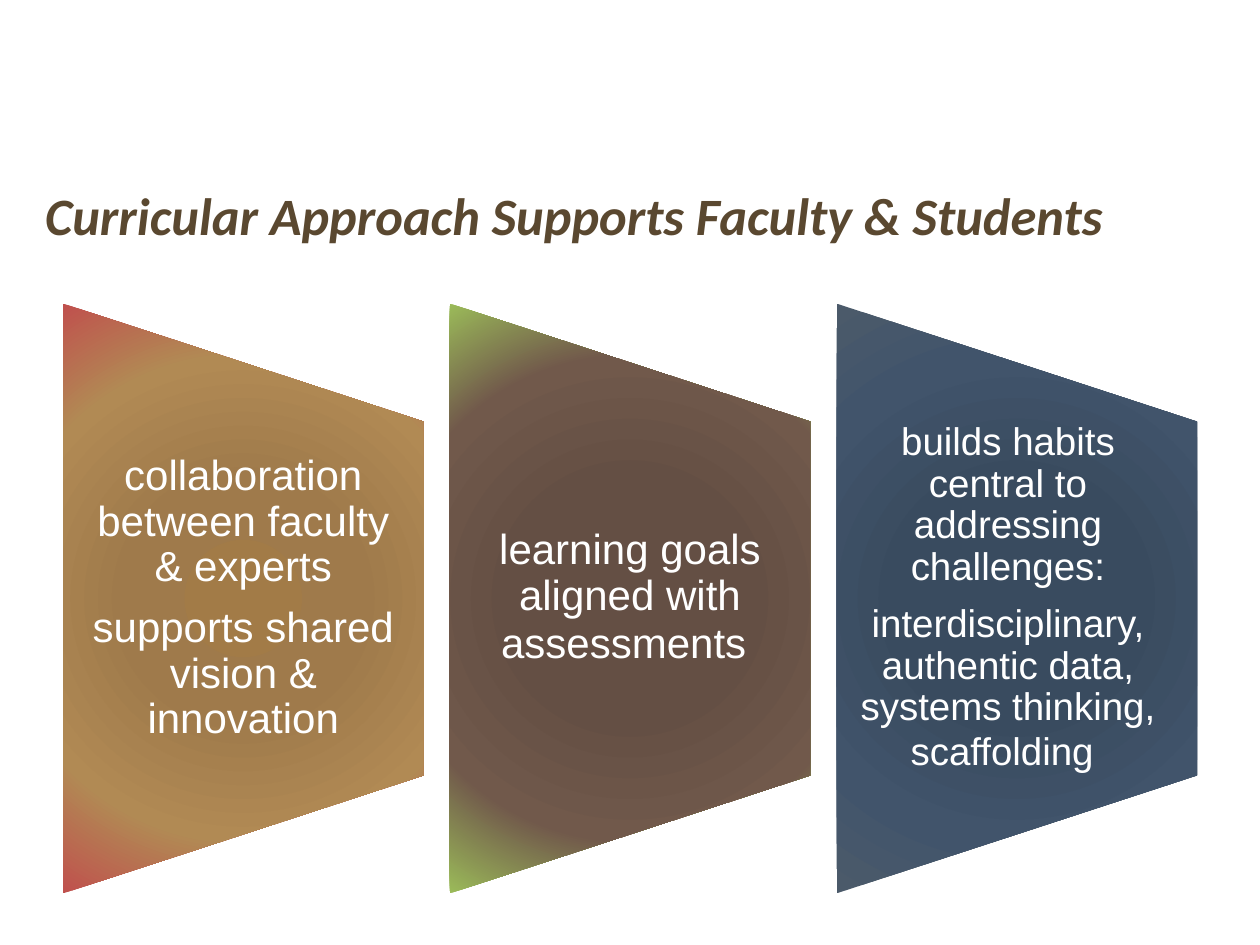
from lxml import etree
from pptx import Presentation
from pptx.dml.color import RGBColor
from pptx.enum.shapes import MSO_SHAPE
from pptx.enum.text import MSO_ANCHOR, PP_ALIGN
from pptx.oxml.ns import qn
from pptx.util import Pt

PANEL = MSO_SHAPE.FLOWCHART_MANUAL_OPERATION
MIDDLE = MSO_ANCHOR.MIDDLE
CENTER = PP_ALIGN.CENTER

TITLE = "Curricular Approach Supports Faculty & Students"
PANELS = [
    {"lines": ["collaboration between faculty & experts",
               "supports shared vision & innovation"],
     "size": 24, "tail": None, "shift": 0,
     "shades": ["A27B47", "9F7A4B", "B18A54", "C0504D"]},
    {"lines": ["learning goals aligned with assessments"],
     "size": 24, "tail": 26, "shift": 0,
     "shades": ["654F43", "644F44", "71594B", "9BBB59"]},
    {"lines": ["builds habits central to addressing challenges:",
               "interdisciplinary, authentic data, systems thinking, scaffolding"],
     "size": 22, "tail": 24, "shift": -5,
     "shades": ["384B60", "394B5F", "41546B", "4B5A6A"]},
]
THEME = {"title": "5A4830", "label": "FFFFFF", "head": "Calibri",
         "body": "Arial", "head_size": 30, "stops": [0, 34, 70, 100]}

WIDE, HIGH = 720, 540
LONG, SHORT, TALL = 337, 206, 202.3
PITCH, MID = 221, 342


def style(run, face, size, color):
    run.font.name = face
    run.font.size = Pt(size)
    run.font.color.rgb = RGBColor.from_string(color)


def add_box(slide, left, top, width, height, side, edge):
    box = slide.shapes.add_textbox(Pt(left), Pt(top), Pt(width), Pt(height))
    frame = box.text_frame
    frame.word_wrap = True
    frame.vertical_anchor = MIDDLE
    frame.margin_left = frame.margin_right = Pt(side)
    frame.margin_top = frame.margin_bottom = Pt(edge)
    return frame


def fill_round(shape, shades):
    grad = etree.Element(qn("a:gradFill"), rotWithShape="1")
    stops = etree.SubElement(grad, qn("a:gsLst"))
    for place, shade in zip(THEME["stops"], shades):
        stop = etree.SubElement(stops, qn("a:gs"), pos=str(place * 1000))
        etree.SubElement(stop, qn("a:srgbClr"), val=shade)
    ring = etree.SubElement(grad, qn("a:path"), path="circle")
    etree.SubElement(ring, qn("a:fillToRect"),
                     {side: "50000" for side in "ltrb"})
    shape._element.spPr.find(qn("a:prstGeom")).addnext(grad)


def add_panel(slide, panel, center):
    shape = slide.shapes.add_shape(PANEL, Pt(center - LONG / 2),
                                   Pt(MID - SHORT / 2), Pt(LONG), Pt(SHORT))
    shape.rotation = 270
    shape.shadow.inherit = False
    shape.line.fill.background()
    fill_round(shape, panel["shades"])

    frame = add_box(slide, center - SHORT / 2 + panel["shift"],
                    MID - TALL / 2, SHORT, TALL, 13, 0)
    frame.text = "\n".join(panel["lines"])
    for spot, para in enumerate(frame.paragraphs):
        para.alignment = CENTER
        para.line_spacing = 0.9
        if spot:
            para.space_before = Pt(9.1)
        style(para.runs[0], THEME["body"], panel["size"], THEME["label"])
    if panel["tail"]:
        run = frame.paragraphs[-1].add_run()
        run.text = " "
        style(run, THEME["body"], panel["tail"], THEME["label"])


def add_title(slide):
    frame = add_box(slide, 18.7, 87, 687.6, 70.6, 7.2, 3.6)
    frame.text = TITLE
    run = frame.paragraphs[0].runs[0]
    style(run, THEME["head"], THEME["head_size"], THEME["title"])
    run.font.bold = run.font.italic = True


def main():
    deck = Presentation()
    deck.slide_width, deck.slide_height = Pt(WIDE), Pt(HIGH)
    slide = deck.slides.add_slide(deck.slide_layouts[6])
    for spot, panel in enumerate(PANELS):
        add_panel(slide, panel, WIDE / 2 + (spot - 1) * PITCH)
    add_title(slide)
    deck.save("out.pptx")


if __name__ == "__main__":
    main()
